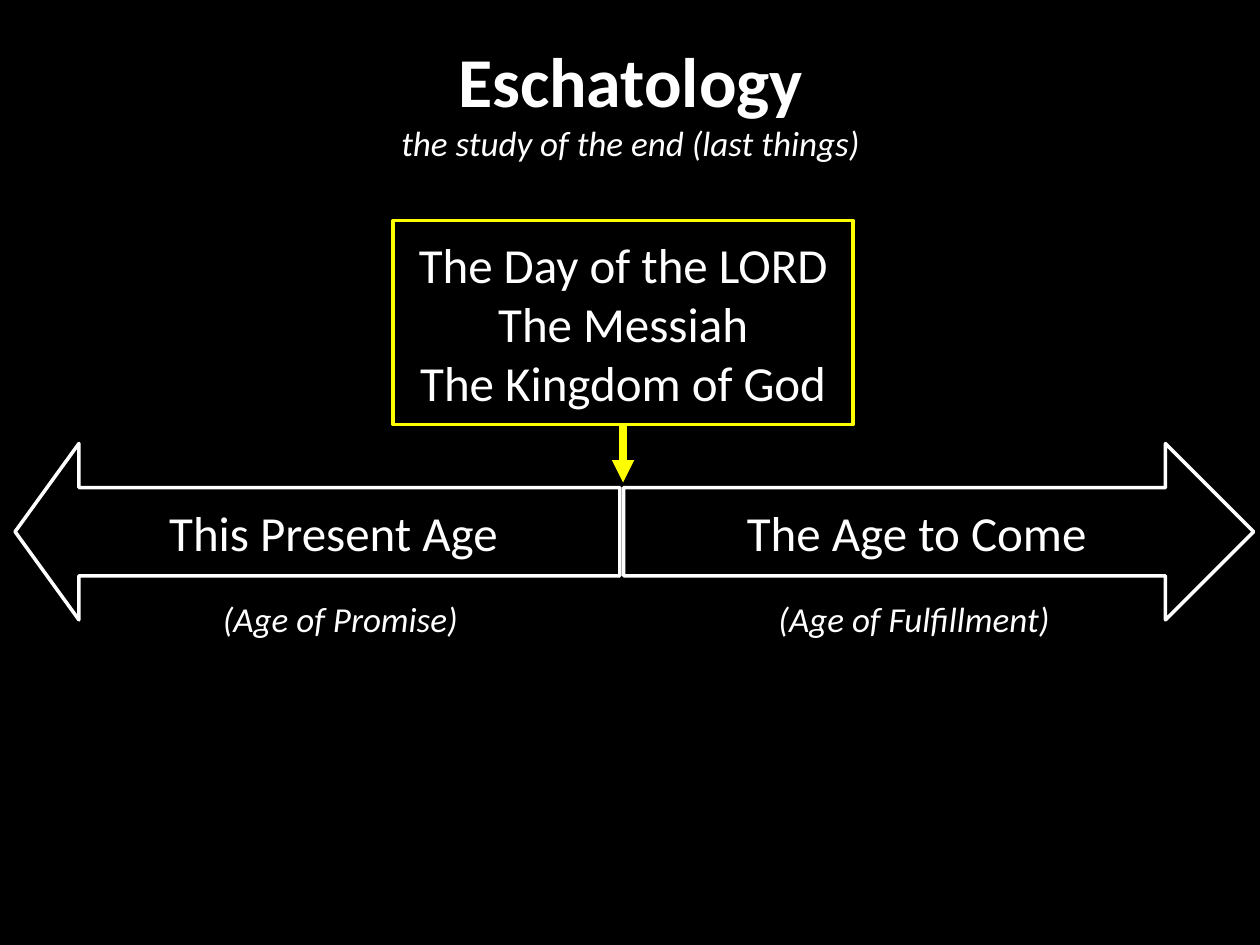
from lxml import etree
from pptx import Presentation
from pptx.dml.color import RGBColor
from pptx.enum.shapes import MSO_CONNECTOR, MSO_SHAPE
from pptx.enum.text import MSO_ANCHOR, MSO_AUTO_SIZE, PP_ALIGN
from pptx.oxml.ns import qn
from pptx.util import Inches, Pt

CENTER, LEFT = PP_ALIGN.CENTER, PP_ALIGN.LEFT
TOP, MIDDLE = MSO_ANCHOR.TOP, MSO_ANCHOR.MIDDLE
RECT = MSO_SHAPE.RECTANGLE
LEFT_ARROW, RIGHT_ARROW = MSO_SHAPE.LEFT_ARROW, MSO_SHAPE.RIGHT_ARROW
BOTTOM_SITE = 2


def color(value):
    return RGBColor.from_string(value)


class Deck:
    FONT, BLACK, WHITE, YELLOW = "Calibri", "000000", "FFFFFF", "FFFF00"

    def __init__(self):
        self.prs = Presentation()
        self.prs.slide_width, self.prs.slide_height = Inches(10), Inches(7.5)
        self.s = self.prs.slides.add_slide(self.prs.slide_layouts[5])
        self.s.background.fill.solid()
        self.s.background.fill.fore_color.rgb = color(self.BLACK)

    def style(self, p, size, align=CENTER, bold=False, italic=False):
        p.alignment = align
        f = p.font
        f.name, f.size, f.bold, f.italic = self.FONT, Pt(size), bold, italic
        f.color.rgb = color(self.WHITE)

    def title(self, heading, subtitle, x, y, w, h):
        sp = self.s.shapes.title
        sp.left, sp.top, sp.width, sp.height = map(Inches, (x, y, w, h))
        tf = sp.text_frame
        tf.auto_size, tf.vertical_anchor = MSO_AUTO_SIZE.NONE, TOP
        tf.text = f"{heading}\n{subtitle}"
        self.style(tf.paragraphs[0], 40, bold=True)
        self.style(tf.paragraphs[1], 20, italic=True)
        tf.paragraphs[1].space_after = Pt(12)

    def outline(self, kind, text, x, y, w, h, line=WHITE, inset=0.2, adjust=()):
        sp = self.s.shapes.add_shape(kind, *map(Inches, (x, y, w, h)))
        sp.shadow.inherit = False
        for i, value in enumerate(adjust):
            sp.adjustments[i] = value
        sp.fill.background()
        sp.line.color.rgb, sp.line.width = color(line), Pt(2)
        tf = sp.text_frame
        tf.word_wrap, tf.vertical_anchor = True, MIDDLE
        tf.margin_left = tf.margin_right = Inches(inset)
        tf.margin_top = tf.margin_bottom = Inches(0.1)
        tf.text = text
        for p in tf.paragraphs:
            self.style(p, 28)
        return sp

    def caption(self, text, x, y, w, h):
        tf = self.s.shapes.add_textbox(*map(Inches, (x, y, w, h))).text_frame
        tf.word_wrap = True
        tf.text = text
        self.style(tf.paragraphs[0], 20, LEFT, italic=True)

    def arrow_down(self, box, x, y1, y2):
        c = self.s.shapes.add_connector(
            MSO_CONNECTOR.STRAIGHT, *map(Inches, (x, y1, x, y2)))
        c.begin_connect(box, BOTTOM_SITE)
        c.end_x = c.begin_x
        c.line.color.rgb, c.line.width = color(self.YELLOW), Pt(4.25)
        etree.SubElement(c.line._get_or_add_ln(), qn("a:tailEnd"), type="triangle")
        etree.SubElement(c._element.spPr, qn("a:effectLst"))


def main():
    d = Deck()
    d.title("Eschatology", "the study of the end (last things)", 0.17, 0.25, 9.67, 6.83)

    # The two ages
    age_top, age_height = 3.52, 1.4
    d.outline(LEFT_ARROW, "This Present Age", 0.12, age_top, 4.8, age_height,
              adjust=(0.5, 0.362))
    d.outline(RIGHT_ARROW, "The Age to Come", 4.95, age_top, 5, age_height)

    # Events at the turning point
    events = d.outline(RECT, "The Day of the LORD\nThe Messiah\nThe Kingdom of God",
                       3.12, 1.75, 3.65, 1.62, line=d.YELLOW, inset=0.1)
    d.arrow_down(events, 4.95, 3.37, 3.83)

    # Captions under the ages
    for text, x, w in (("(Age of Promise)", 1.67, 2.08),
                       ("(Age of Fulfillment)", 6.08, 2.51)):
        d.caption(text, x, 4.69, w, 0.44)

    d.prs.save("out.pptx")


if __name__ == "__main__":
    main()
